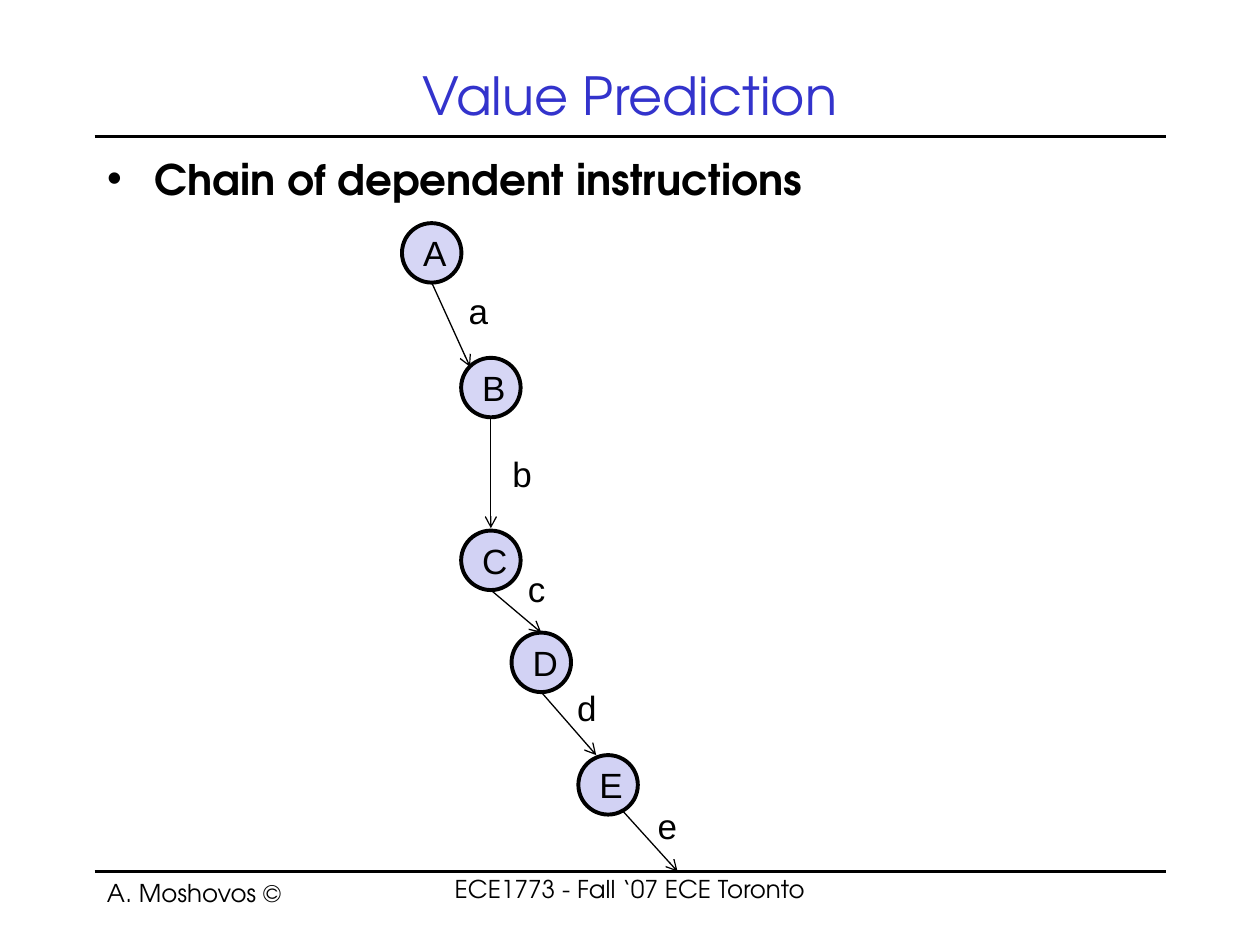
import pptx
import pptx.util
import pptx.dml.color
import pptx.enum.shapes
import pptx.enum.text
import pptx.oxml.ns
from dataclasses import dataclass
from lxml import etree

Pt = pptx.util.Pt
RGB = pptx.dml.color.RGBColor.from_string
ALIGN = pptx.enum.text.PP_ALIGN
ANCHOR = pptx.enum.text.MSO_ANCHOR
AUTO = pptx.enum.text.MSO_AUTO_SIZE
qn = pptx.oxml.ns.qn


@dataclass(frozen=True)
class Theme:
    ink: str = "000000"
    title: str = "3333CC"
    node_light: str = "D6D6F5"
    node_dark: str = "D2D2F4"
    heading_font: str = "TeX Gyre Adventor"
    diagram_font: str = "Arial"
    title_size: int = 30
    body_size: int = 24
    diagram_size: int = 20
    footer_size: int = 14
    heavy: float = 2.25
    thin: float = 0.75


T = Theme()
NODE = 34
BOTTOM, TOP, TOP_LEFT = (0.5, 1), (0.5, 0), (0.15, 0.15)


def apply(obj, formats):
    for name, value in formats.items():
        setattr(obj, name, value)


def place(sp, box):
    apply(sp, dict(zip(("left", "top", "width", "height"), map(Pt, box))))


def write(sp, text, font, size, color=T.ink, bold=False, align=ALIGN.LEFT, **frame):
    tf = sp.text_frame
    apply(tf, {"word_wrap": True, "auto_size": AUTO.NONE, **frame})
    p = tf.paragraphs[0]
    p.alignment = align
    r = p.add_run()
    r.text = text
    apply(r.font, {"name": font, "size": Pt(size), "bold": bold})
    r.font.color.rgb = RGB(color)
    return p


def add_label(s, box, text, font, size, **formats):
    x, y, w, h = map(Pt, box)
    write(s.shapes.add_textbox(x, y, w, h), text, font, size, **formats)


def add_line(s, start, end, width, arrow=False):
    straight = pptx.enum.shapes.MSO_CONNECTOR.STRAIGHT
    line = s.shapes.add_connector(straight, *map(Pt, (*start, *end)))
    line.line.color.rgb = RGB(T.ink)
    line.line.width = Pt(width)
    if arrow:
        etree.SubElement(line.line._get_or_add_ln(), qn("a:tailEnd"), type="arrow")
    etree.SubElement(line._element.spPr, qn("a:effectLst"))


def add_header(s, box):
    x, y, w, h = box
    sp = s.shapes.title
    place(sp, box)
    write(sp, "Value Prediction", T.heading_font, T.title_size, T.title,
          align=ALIGN.CENTER, vertical_anchor=ANCHOR.MIDDLE)
    add_line(s, (x, y + h), (x + w, y + h), T.heavy)


def add_body(s, box):
    sp = s.placeholders[1]
    place(sp, box)
    p = write(sp, "Chain of dependent instructions", T.heading_font, T.body_size, bold=True)
    apply_indent = p._p.get_or_add_pPr().set
    apply_indent("marL", str(Pt(27)))
    apply_indent("indent", str(Pt(-27)))


def add_footer(s, box):
    x, y, w, h = box
    add_line(s, (x, y), (x + w, y), T.heavy)
    add_label(s, (x, y, 150, h), "A. Moshovos ©", T.heading_font, T.footer_size)
    add_label(s, (x + 180, y - 2, w - 360, h), "ECE1773 - Fall ‘07 ECE Toronto",
              T.heading_font, T.footer_size, align=ALIGN.CENTER)


def add_node(s, x, y, name, fill):
    oval = pptx.enum.shapes.MSO_SHAPE.OVAL
    sp = s.shapes.add_shape(oval, *map(Pt, (x, y, NODE, NODE)))
    sp.shadow.inherit = False
    sp.fill.solid()
    sp.fill.fore_color.rgb = RGB(fill)
    sp.line.color.rgb = RGB(T.ink)
    sp.line.width = Pt(T.heavy)
    write(sp, name, T.diagram_font, T.diagram_size, align=ALIGN.CENTER,
          vertical_anchor=ANCHOR.MIDDLE)


def add_chain(s, box):
    x, y, w, h = box
    nodes = {
        "A": (0, 0, T.node_light),
        "B": (33.8, 77, T.node_light),
        "C": (33.8, 175.7, T.node_dark),
        "D": (62.6, 234, T.node_dark),
        "E": (100.8, 304, T.node_dark),
    }
    links = [
        ("A", BOTTOM, "B", TOP_LEFT, (31, 34.5)),
        ("B", BOTTOM, "C", (0.5, -0.04), (56, 127.4)),
        ("C", BOTTOM, "D", TOP, (64.8, 193)),
        ("D", BOTTOM, "E", (0.3, 0), (93, 261.4)),
        ("E", (0.72, 0.91), None, None, (139, 328.4)),
    ]

    def point(name, site):
        left, top, _ = nodes[name]
        return x + left + site[0] * NODE, y + top + site[1] * NODE

    for name, (left, top, fill) in nodes.items():
        add_node(s, x + left, y + top, name, fill)
    for source, exit_site, target, entry_site, (left, top) in links:
        end = point(target, entry_site) if target else (x + w, y + h)
        add_line(s, point(source, exit_site), end, T.thin, arrow=True)
        add_label(s, (x + left, y + top, 26, 32), source.lower(), T.diagram_font,
                  T.diagram_size, word_wrap=False, auto_size=AUTO.SHAPE_TO_FIT_TEXT)


def main():
    prs = pptx.Presentation()
    apply(prs, {"slide_width": Pt(720), "slide_height": Pt(540)})
    s = prs.slides.add_slide(prs.slide_layouts[1])
    add_header(s, (54, 30, 612, 48))
    add_body(s, (54, 84, 612, 408))
    add_footer(s, (54, 498, 612, 30))
    add_chain(s, (229.7, 127.5, 157.5, 370.5))
    prs.save("out.pptx")


if __name__ == "__main__":
    main()
